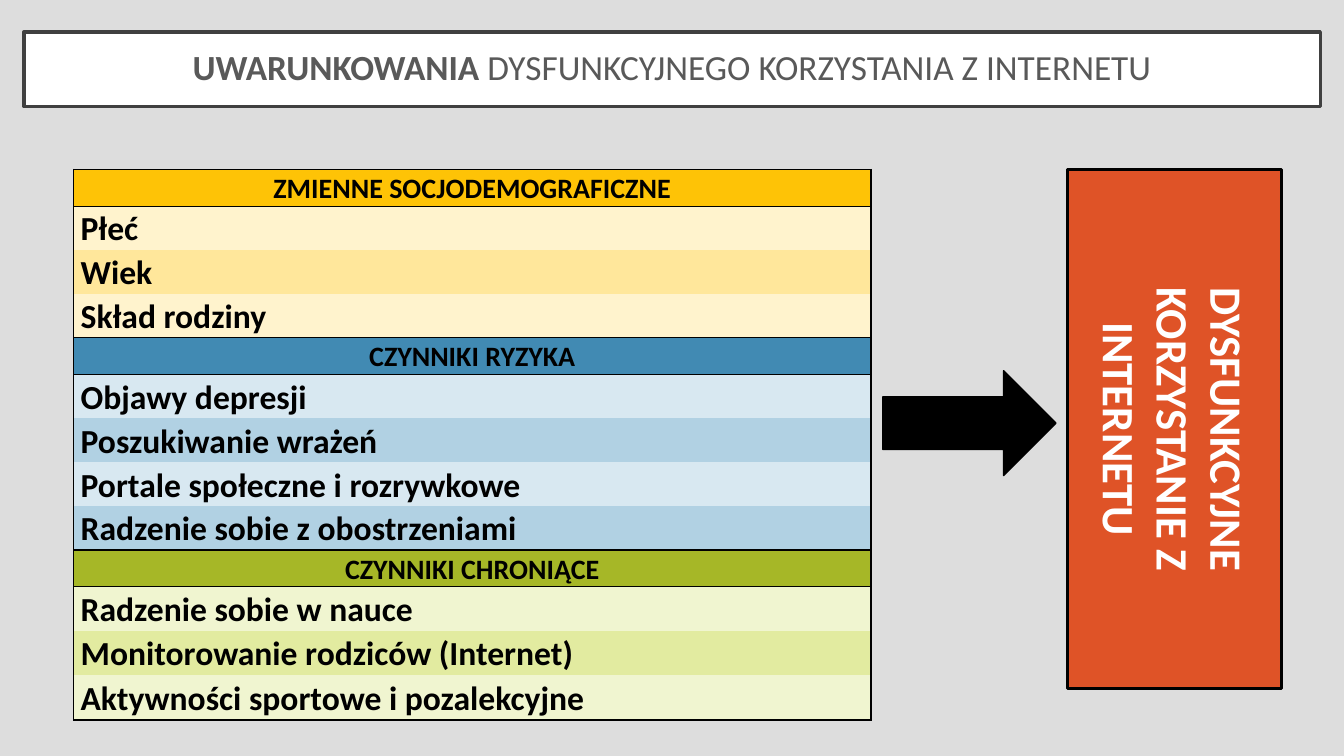
from pptx import Presentation
from pptx.dml.color import RGBColor
from pptx.enum import shapes, text
from pptx.oxml import parse_xml
from pptx.oxml.ns import nsdecls
from pptx.util import Pt

FONT = "Calibri"
BLACK = "000000"
PLAIN = "{2D5ABB26-0587-4C30-8999-92F81FD0307C}"

# heading, heading fill, odd row fill, even row fill, factors
GROUPS = [
    ("ZMIENNE SOCJODEMOGRAFICZNE", "FEC306", "FFF3CD", "FFE79B",
     ["Płeć", "Wiek", "Skład rodziny"]),
    ("CZYNNIKI RYZYKA", "418AB3", "D8E8F1", "B1D1E3",
     ["Objawy depresji", "Poszukiwanie wrażeń",
      "Portale społeczne i rozrywkowe", "Radzenie sobie z obostrzeniami"]),
    ("CZYNNIKI CHRONIĄCE", "A6B727", "F0F5D0", "E2EBA0",
     ["Radzenie sobie w nauce", "Monitorowanie rodziców (Internet)",
      "Aktywności sportowe i pozalekcyjne"]),
]


def color(code):
    return RGBColor.from_string(code)


def style(run, size, code, bold=True):
    run.font.name = FONT
    run.font.size = Pt(size)
    run.font.bold = bold
    run.font.color.rgb = color(code)


def block(slide, kind, box, fill, line, width):
    shape = slide.shapes.add_shape(kind, *map(Pt, box))
    shape.shadow.inherit = False
    shape.fill.solid()
    shape.fill.fore_color.rgb = color(fill)
    shape.line.color.rgb = color(line)
    shape.line.width = Pt(width)
    return shape


def title(slide, box):
    shape = block(slide, shapes.MSO_SHAPE.RECTANGLE, box, "FFFFFF", "404040", 2.5)
    frame = shape.text_frame
    frame.word_wrap = True
    frame.vertical_anchor = text.MSO_ANCHOR.MIDDLE
    frame.margin_left = frame.margin_right = Pt(14.4)
    frame.margin_top = frame.margin_bottom = Pt(14.4)
    para = frame.paragraphs[0]
    para.alignment = text.PP_ALIGN.CENTER
    para.line_spacing = 0.9
    for words, bold in [("UWARUNKOWANIA", True),
                        (" DYSFUNKCYJNEGO KORZYSTANIA Z INTERNETU", False)]:
        run = para.add_run()
        run.text = words
        style(run, 25.2, "595959", bold)


def border(cell, sides):
    """Draw black lines on the given sides and none on the others."""
    props = cell._tc.get_or_add_tcPr()
    for spot, side in enumerate("LRTB"):
        paint = "<a:noFill/>"
        if side in sides:
            paint = f'<a:solidFill><a:srgbClr val="{BLACK}"/></a:solidFill>'
        props.insert(spot, parse_xml(
            f'<a:ln{side} {nsdecls("a")} w="12700">{paint}</a:ln{side}>'))


def fill_cell(cell, words, size, fill, align, sides):
    cell.fill.solid()
    cell.fill.fore_color.rgb = color(fill)
    border(cell, sides)
    cell.vertical_anchor = text.MSO_ANCHOR.MIDDLE
    cell.margin_left = cell.margin_right = Pt(5)
    cell.margin_top = cell.margin_bottom = 0
    cell.text_frame.text = words
    para = cell.text_frame.paragraphs[0]
    para.alignment = align
    para.line_spacing = 1.07
    para.space_after = Pt(8)
    style(para.runs[0], size, BLACK)


def factors(slide, box):
    rows = []
    for head, dark, odd, even, names in GROUPS:
        rows.append((26, head, 20, dark, text.PP_ALIGN.CENTER, "LRTB"))
        for i, name in enumerate(names):
            sides = "LR" + "T" * (i == 0) + "B" * (i == len(names) - 1)
            rows.append((31.2, name, 24, even if i % 2 else odd,
                         text.PP_ALIGN.LEFT, sides))
    table = slide.shapes.add_table(len(rows), 1, *map(Pt, box)).table
    table.first_row = table.horz_banding = False
    table._tbl.tblPr.find("{*}tableStyleId").text = PLAIN
    for i, (height, *look) in enumerate(rows):
        table.rows[i].height = Pt(height)
        fill_cell(table.cell(i, 0), *look)
    table.rows[len(rows) - 1].height = Pt(32.4)


def outcome(slide, box):
    shape = block(slide, shapes.MSO_SHAPE.RECTANGLE, box, "DF5327", BLACK, 2.25)
    frame = shape.text_frame
    frame.text = "DYSFUNKCYJNE KORZYSTANIE Z INTERNETU"
    frame.word_wrap = True
    frame.vertical_anchor = text.MSO_ANCHOR.MIDDLE
    frame._txBody.bodyPr.set("vert", "vert")
    para = frame.paragraphs[0]
    para.alignment = text.PP_ALIGN.CENTER
    style(para.runs[0], 32, "FFFFFF")


def main():
    deck = Presentation()
    deck.slide_width, deck.slide_height = Pt(960), Pt(540)
    slide = deck.slides.add_slide(deck.slide_layouts[6])
    slide.background.fill.solid()
    slide.background.fill.fore_color.rgb = color("DDDDDD")
    title(slide, (17.1, 22.8, 926, 53.4))
    factors(slide, (52.6, 121, 569.5, 391.2))
    outcome(slide, (762.3, 121, 153.4, 371))
    block(slide, shapes.MSO_SHAPE.RIGHT_ARROW, (630.5, 264.8, 123.8, 74.9),
          BLACK, BLACK, 1)
    deck.save("out.pptx")


if __name__ == "__main__":
    main()
